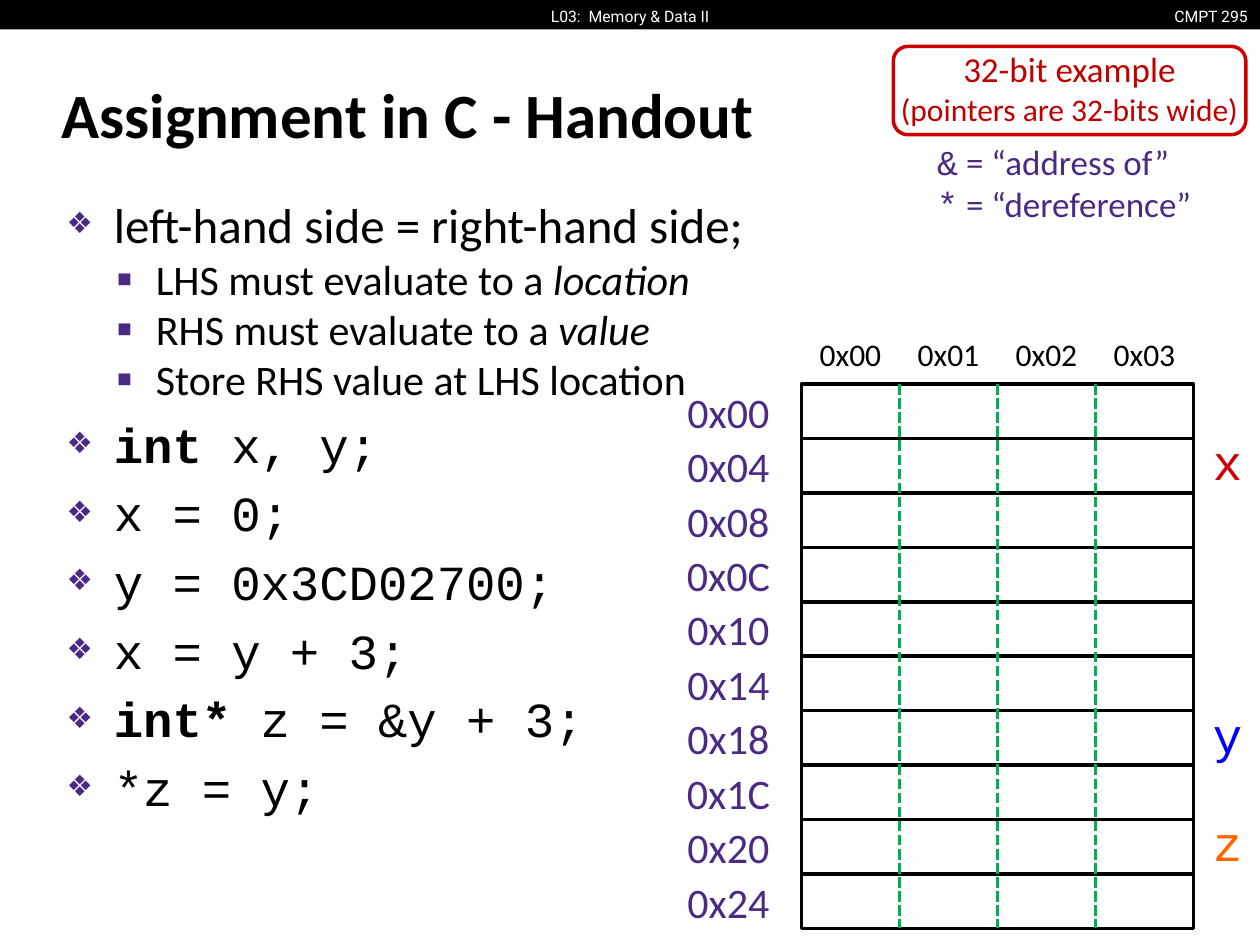
from lxml.etree import SubElement
from pptx import Presentation
from pptx.dml.color import RGBColor
from pptx.enum.dml import MSO_LINE
from pptx.enum.shapes import MSO_CONNECTOR, MSO_SHAPE
from pptx.enum.text import MSO_ANCHOR as Anchor, PP_ALIGN as Align
from pptx.oxml.ns import qn
from pptx.util import Pt

BLACK = RGBColor(0x00, 0x00, 0x00)
WHITE = RGBColor(0xFF, 0xFF, 0xFF)
PURPLE = RGBColor(0x4B, 0x2A, 0x85)
GREEN = RGBColor(0x00, 0xB0, 0x50)
RED = RGBColor(0xCC, 0x00, 0x00)
DARK_RED = RGBColor(0xC0, 0x00, 0x00)
BLUE = RGBColor(0x00, 0x00, 0xFF)
ORANGE = RGBColor(0xFF, 0x66, 0x00)
SANS, MONO, HEADER_FONT = "Calibri", "Courier New", "Roboto"

# Each line: level, font, then (text, style) runs.
BODY_LINES = [
    (0, SANS, [("left-hand side = right-hand side;", "")]),
    (1, SANS, [("LHS must evaluate to a ", ""), ("location", "italic")]),
    (1, SANS, [("RHS must evaluate to a ", ""), ("value", "italic")]),
    (1, SANS, [("Store RHS value at LHS location", "")]),
    (0, MONO, [("int", "bold"), (" x, y;", "")]),
    (0, MONO, [("x = 0;", "")]),
    (0, MONO, [("y = 0x3CD02700;", "")]),
    (0, MONO, [("x = y + 3;", "")]),
    (0, MONO, [("int* ", "bold"), ("z = &y + 3;", "")]),
    (0, MONO, [("*z = y;", "")]),
]
# Per level: text size, left margin, hanging indent, bullet, bullet %, space before %
LEVELS = [(28, 27, 27, "❖", 60, 20), (24, 51, 22.5, "▪", 110, 0)]

ROWS, COLUMNS, WORD_BYTES = 10, 4, 4
VARIABLES = [("x", 1, RED), ("y", 6, BLUE), ("z", 8, ORANGE)]


def style_run(run, size, color, font=SANS):
    run.font.size = Pt(size)
    run.font.color.rgb = color
    run.font.name = font


def add_text_box(slide, left, top, width, height, wrap=True):
    box = slide.shapes.add_textbox(Pt(left), Pt(top), Pt(width), Pt(height))
    box.text_frame.word_wrap = wrap
    return box.text_frame


def set_insets(frame, inset, bottom):
    frame.margin_left = frame.margin_right = frame.margin_top = Pt(inset)
    frame.margin_bottom = Pt(bottom)


def add_label(slide, text, box, size, color, font=SANS, align=Align.CENTER):
    """Place one unwrapped line, vertically centred in its box."""
    frame = add_text_box(slide, *box, wrap=False)
    set_insets(frame, 0, 0)
    frame.vertical_anchor = Anchor.MIDDLE
    frame.text = text
    paragraph = frame.paragraphs[0]
    paragraph.alignment = align
    style_run(paragraph.runs[0], size, color, font)


def add_outline(slide, preset, box, color):
    shape = slide.shapes.add_shape(preset, *map(Pt, box))
    shape.shadow.inherit = False
    shape.fill.background()
    shape.line.color.rgb = color
    shape.line.width = Pt(2)
    return shape


def set_bullet(paragraph, level):
    _, margin, hanging, bullet, percent, before = LEVELS[level]
    properties = paragraph._p.get_or_add_pPr()
    properties.set("marL", str(Pt(margin)))
    properties.set("indent", str(-Pt(hanging)))
    spacing = SubElement(properties, qn("a:spcBef"))
    SubElement(spacing, qn("a:spcPct"), val=str(before * 1000))
    bullet_color = SubElement(properties, qn("a:buClr"))
    SubElement(bullet_color, qn("a:srgbClr"), val=str(PURPLE))
    SubElement(properties, qn("a:buSzPct"), val=str(percent * 1000))
    SubElement(properties, qn("a:buFont"), typeface=SANS)
    SubElement(properties, qn("a:buChar"), char=bullet)


def add_header(slide, left, top, width, height):
    bar = slide.shapes.add_shape(
        MSO_SHAPE.RECTANGLE, Pt(left), Pt(top), Pt(width), Pt(height))
    bar.shadow.inherit = False
    bar.fill.solid()
    bar.fill.fore_color.rgb = BLACK
    bar.line.fill.background()
    label_top = top + 1.2
    add_label(slide, "CMPT 295", (left + width - 58, label_top, 51, height),
              9, WHITE, HEADER_FONT, Align.RIGHT)
    add_label(slide, "L03:  Memory & Data II",
              (left + width / 2 - 53, label_top, 106, height), 9, WHITE, HEADER_FONT)


def place_title(slide, left, top, width, height):
    title = slide.shapes.title
    title.left, title.top, title.width, title.height = map(Pt, (left, top, width, height))
    frame = title.text_frame
    frame.text = "Assignment in C - Handout"
    frame.vertical_anchor = Anchor.MIDDLE
    paragraph = frame.paragraphs[0]
    paragraph.alignment = Align.LEFT
    style_run(paragraph.runs[0], 36, BLACK)
    paragraph.runs[0].font.bold = True


def add_body(slide, left, top, width, height):
    frame = add_text_box(slide, left, top, width, height)
    for index, (level, font, runs) in enumerate(BODY_LINES):
        paragraph = frame.add_paragraph() if index else frame.paragraphs[0]
        paragraph.level = level
        set_bullet(paragraph, level)
        for text, style in runs:
            run = paragraph.add_run()
            run.text = text
            style_run(run, LEVELS[level][0], BLACK, font)
            if style == "bold":
                run.font.bold = True
            elif style == "italic":
                run.font.italic = True


def add_memory(slide, left, top, width, height):
    """Draw the byte grid with its offsets, row addresses and variable names."""
    row_height, column_width = height / ROWS, width / COLUMNS
    for row in range(ROWS):
        row_top = top + row * row_height
        add_outline(slide, MSO_SHAPE.RECTANGLE,
                    (left, row_top, width, row_height), BLACK)
        add_label(slide, f"0x{row * WORD_BYTES:02X}",
                  (left - 83.5, row_top, 83.5, row_height), 24, PURPLE)
    for column in range(COLUMNS):
        column_left = left + column * column_width
        add_label(slide, f"0x{column:02X}",
                  (column_left, top - 32, column_width, 29), 18, BLACK)
        if column:
            divider = slide.shapes.add_connector(
                MSO_CONNECTOR.STRAIGHT, Pt(column_left), Pt(top),
                Pt(column_left), Pt(top + height))
            divider.line.color.rgb = GREEN
            divider.line.width = Pt(2)
            divider.line.dash_style = MSO_LINE.SQUARE_DOT
            SubElement(divider._element.spPr, qn("a:effectLst"))
    for name, row, color in VARIABLES:
        add_label(slide, name,
                  (left + width + 1, top + row * row_height - 3, 37, 32),
                  28, color, MONO)


def add_operator_legend(slide, left, top, width, height):
    frame = add_text_box(slide, left, top, width, height)
    legend = [("&", " = “address of”"), ("*", " = “dereference”")]
    for index, texts in enumerate(legend):
        paragraph = frame.add_paragraph() if index else frame.paragraphs[0]
        for text, font in zip(texts, (MONO, SANS)):
            run = paragraph.add_run()
            run.text = text
            style_run(run, 20, PURPLE, font)


def add_pointer_note(slide, *box):
    frame = add_outline(slide, MSO_SHAPE.ROUNDED_RECTANGLE, box, RED).text_frame
    set_insets(frame, 0, 3.6)
    frame.word_wrap = True
    frame.vertical_anchor = Anchor.MIDDLE
    frame.text = "32-bit example\n(pointers are 32-bits wide)"
    for paragraph, size in zip(frame.paragraphs, (20, 18)):
        paragraph.alignment = Align.CENTER
        style_run(paragraph.runs[0], size, DARK_RED)


def main():
    presentation = Presentation()
    presentation.slide_width, presentation.slide_height = Pt(720), Pt(540)
    slide = presentation.slides.add_slide(presentation.slide_layouts[5])
    add_header(slide, 0, -1.2, 720, 18)
    place_title(slide, 28, 34.5, 662, 60)
    add_body(slide, 31, 107.5, 659, 392)
    add_memory(slide, 458, 219.5, 224, 311)
    add_operator_legend(slide, 528.5, 76.5, 165.5, 55.5)
    add_pointer_note(slide, 510.5, 26.5, 201.5, 50.5)
    presentation.save("out.pptx")


if __name__ == "__main__":
    main()
